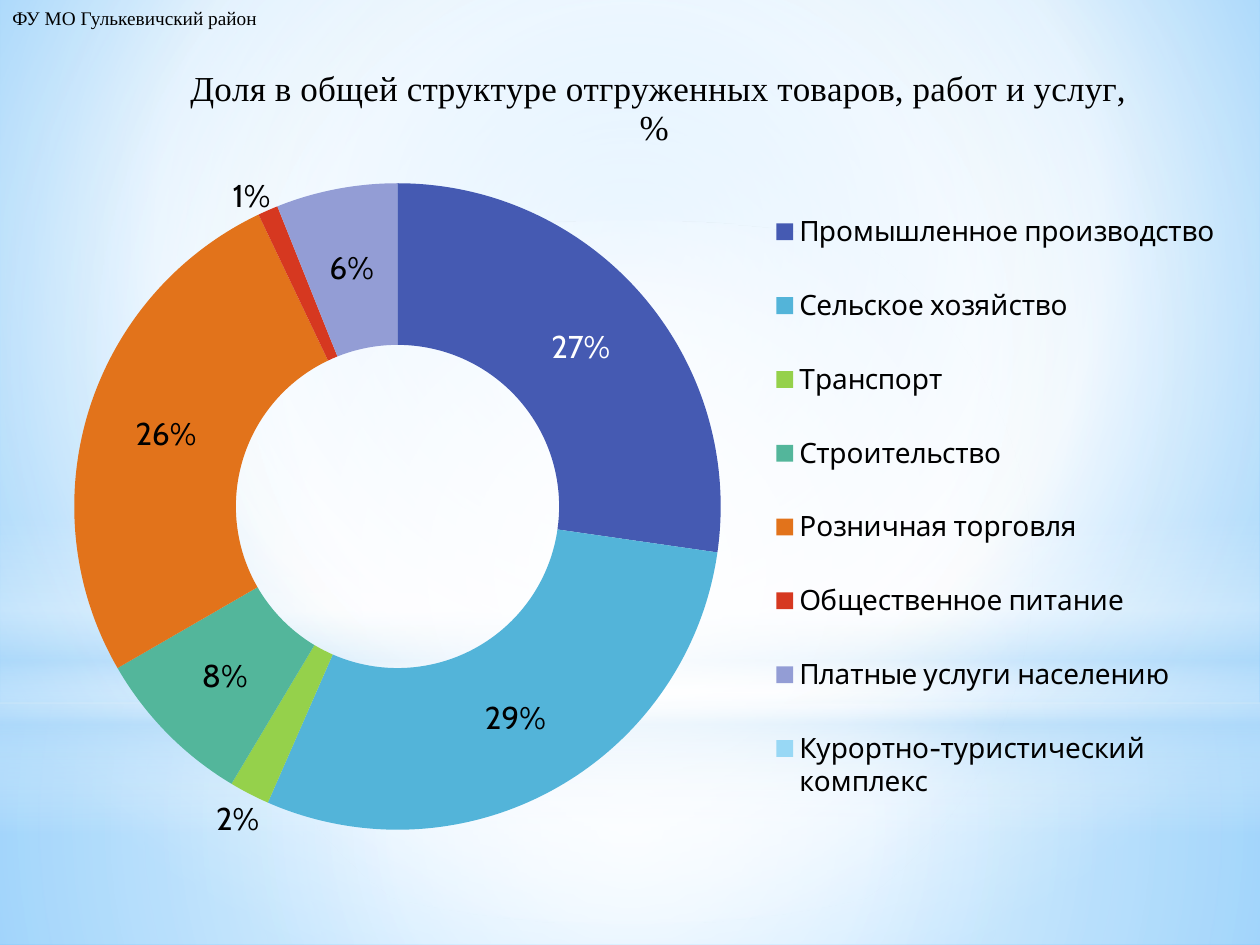
from pptx import Presentation
from pptx.chart.data import CategoryChartData
from pptx.dml.color import RGBColor
from pptx.enum.chart import XL_CHART_TYPE, XL_LEGEND_POSITION
from pptx.enum.shapes import MSO_SHAPE
from pptx.oxml import parse_xml
from pptx.oxml.ns import nsdecls, qn
from pptx.util import Inches, Pt

DOUGHNUT = XL_CHART_TYPE.DOUGHNUT
RIGHT = XL_LEGEND_POSITION.RIGHT
RECTANGLE, OVAL = MSO_SHAPE.RECTANGLE, MSO_SHAPE.OVAL

WIDTH, HEIGHT = 10, 7.5
SERIF, SANS = "Times New Roman", "Cabin"
COLORS = {
    "black": "000000", "white": "FFFFFF", "haze": "B4DCFA",
    "sky": "9ED5FF", "deep sky": "5BB9FF",
    "indigo": "455AB2", "cyan": "53B4D9", "lime": "95D14B", "teal": "53B69B",
    "orange": "E2731B", "red": "D63820", "lavender": "939DD5", "pale blue": "98D8F5",
}
HEADER = "ФУ МО Гулькевичский район"
TITLE = "Доля в общей структуре отгруженных товаров, работ и услуг, % "
SECTORS = [
    ("Промышленное производство", 27, "indigo"),
    ("Сельское хозяйство", 29, "cyan"),
    ("Транспорт", 2, "lime"),
    ("Строительство", 8, "teal"),
    ("Розничная торговля", 26, "orange"),
    ("Общественное питание", 1, "red"),
    ("Платные услуги населению", 6, "lavender"),
    ("Курортно-туристический комплекс", 0, "pale blue"),
]
LABELS = {
    0: ("white", (0, 0)),
    2: ("black", (-0.04, 0.11)),
    5: ("black", (-0.04, -0.1)),
    7: ("black", (0.01, -0.12)),
}
CENTER = (50, 50, 50, 50)
BACKGROUND = ([(0, "sky", 100), (60, "white", 100), (100, "deep sky", 100)], (20, 10, 20, 60))
GLOWS = [
    (RECTANGLE, 5.58, 1.92, [(0, "white", 91), (37, "white", 76), (100, "haze", 79)], CENTER),
    (RECTANGLE, 0, 5.58, [(0, "white", 89), (48, "white", 62), (100, "haze", 79)], CENTER),
    (RECTANGLE, 4.12, 2.5, [(0, "white", 0), (29, "white", 30), (45, "haze", 40),
                            (55, "white", 26), (65, "haze", 60), (100, "white", 0)], None),
    (OVAL, 1.75, 5.58, [(0, "white", 100), (56, "white", 0)], CENTER),
]


def format_font(font, size, name=SANS, color="black", bold=False):
    font.size, font.name, font.bold = Pt(size), name, bold
    font.color.rgb = RGBColor.from_string(COLORS[color])


def write_text(frame, text, **font_format):
    paragraph = frame.paragraphs[0]
    run = paragraph.add_run()
    run.text = text
    format_font(run.font, **font_format)


def apply_gradient(owner, element, stops, focus):
    owner.fill.background()
    marks = "".join(
        f'<a:gs pos="{position * 1000}"><a:srgbClr val="{COLORS[color]}">'
        f'<a:alpha val="{alpha * 1000}"/></a:srgbClr></a:gs>'
        for position, color, alpha in stops)
    direction = '<a:lin ang="5400000" scaled="0"/>'
    if focus:
        sides = " ".join(f'{side}="{share * 1000}"' for side, share in zip("ltrb", focus))
        direction = f'<a:path path="circle"><a:fillToRect {sides}/></a:path>'
    gradient = parse_xml(f'<a:gradFill {nsdecls("a")} rotWithShape="1">'
                         f'<a:gsLst>{marks}</a:gsLst>{direction}</a:gradFill>')
    empty = element.xpath(".//p:bgPr/a:noFill | ./p:spPr/a:noFill")[0]
    empty.getparent().replace(empty, gradient)


def place(element, index, left, top, size=None, inner=False, edge=True):
    for old in element.findall(qn("c:layout")):
        element.remove(old)
    values = [("layoutTarget", "inner")] if inner else []
    if edge:
        values += [("xMode", "edge"), ("yMode", "edge")]
    values += [("x", left), ("y", top)]
    if size:
        values += zip("wh", size)
    tags = "".join(f'<c:{tag} val="{value}"/>' for tag, value in values)
    element.insert(index, parse_xml(
        f'<c:layout {nsdecls("c")}><c:manualLayout>{tags}</c:manualLayout></c:layout>'))


def add_sector_chart(slide):
    data = CategoryChartData()
    data.categories = [name for name, _, _ in SECTORS]
    data.add_series("Series 1", [value for _, value, _ in SECTORS])
    chart = slide.shapes.add_chart(DOUGHNUT, Inches(0.2), Inches(0.26),
                                   Inches(9.69), Inches(7.03), data).chart
    format_font(chart.font, 18)

    chart.has_title = True
    write_text(chart.chart_title.text_frame, TITLE, size=20, name=SERIF)
    chart.chart_title.include_in_layout = False
    place(chart.element.xpath("./c:chart/c:title")[0], 1, 0.13, 0.03)

    chart.has_legend = True
    chart.legend.position = RIGHT
    chart.legend.include_in_layout = False
    format_font(chart.legend.font, 16)
    place(chart.element.xpath(".//c:legend")[0], 1, 0.6, 0.16, size=(0.39, 0.75))
    place(chart.element.xpath(".//c:plotArea")[0], 0, 0.04, 0.17, size=(0.53, 0.73), inner=True)

    series = chart.plots[0].series[0]
    labels = series.data_labels
    labels.show_value, labels.show_percentage = False, True
    labels.number_format, labels.number_format_is_linked = "0%", False
    format_font(labels.font, 18)
    for index, (_, _, color) in enumerate(SECTORS):
        fill = series.points[index].format.fill
        fill.solid()
        fill.fore_color.rgb = RGBColor.from_string(COLORS[color])
        series.points[index].format.line.fill.background()
    for index, (color, _) in LABELS.items():
        format_font(series.points[index].data_label.font, 18, color=color)
    for label in chart.element.xpath(".//c:ser/c:dLbls/c:dLbl"):
        label.find(qn("c:showVal")).set("val", "0")
        label.find(qn("c:showPercent")).set("val", "1")
        offset = LABELS[int(label.find(qn("c:idx")).get("val"))][1]
        if any(offset):
            place(label, 1, *offset, edge=False)


def main():
    presentation = Presentation()
    presentation.slide_width, presentation.slide_height = Inches(WIDTH), Inches(HEIGHT)
    slide = presentation.slides.add_slide(presentation.slide_layouts[6])
    apply_gradient(slide.background, slide.element, *BACKGROUND)
    for kind, top, height, stops, focus in GLOWS:
        shape = slide.shapes.add_shape(kind, 0, Inches(top), Inches(WIDTH), Inches(height))
        shape.shadow.inherit = False
        shape.line.fill.background()
        apply_gradient(shape, shape.element, stops, focus)
    add_sector_chart(slide)
    header = slide.shapes.add_textbox(0, 0, Inches(2.18), Inches(0.29))
    header.text_frame.word_wrap = False
    write_text(header.text_frame, HEADER, size=11, name=SERIF)
    presentation.save("out.pptx")


if __name__ == "__main__":
    main()
